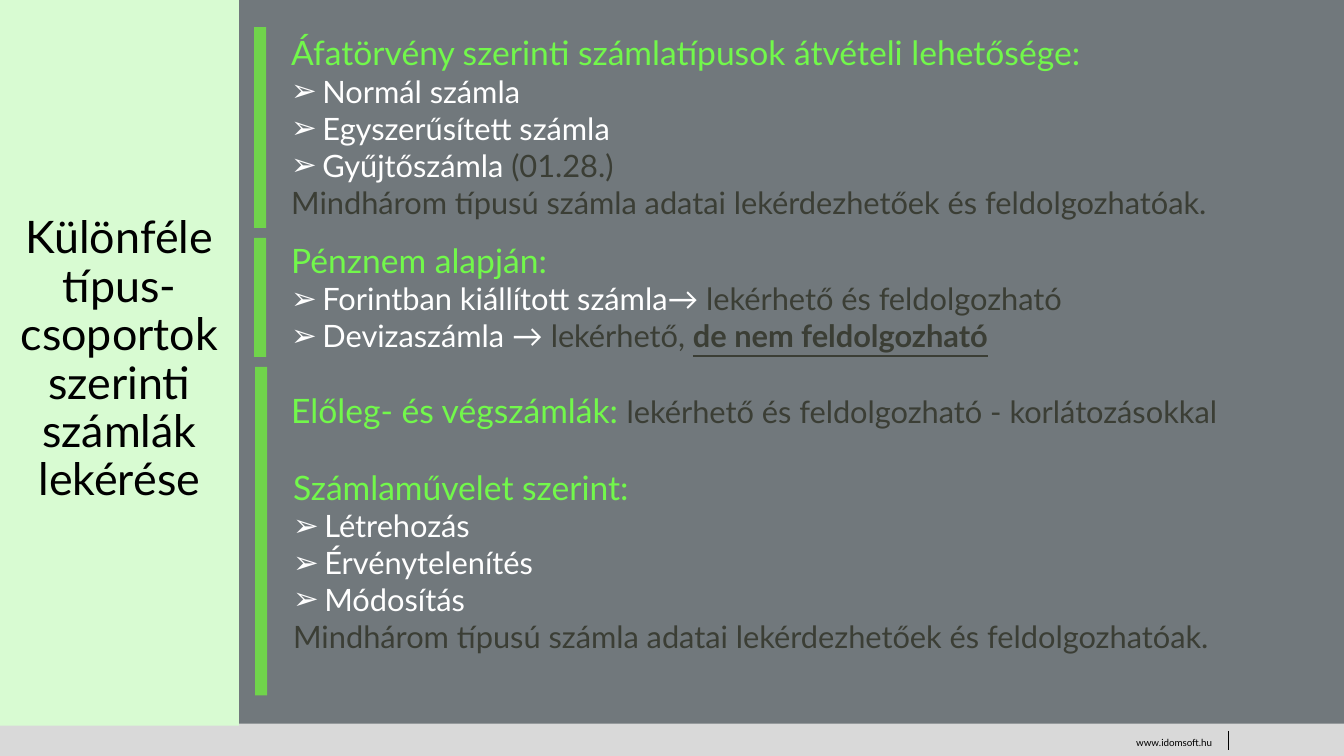
from dataclasses import dataclass

from lxml.etree import SubElement
from pptx import Presentation
from pptx.dml.color import RGBColor
from pptx.enum.shapes import MSO_CONNECTOR, MSO_SHAPE
from pptx.enum.text import MSO_ANCHOR, PP_ALIGN
from pptx.oxml.ns import qn
from pptx.util import Pt

EMU_PER_PX = 9144


@dataclass(frozen=True)
class Theme:
    font: str = "Lato"
    background: str = "71787C"
    footer: str = "D9D9D9"
    sidebar: str = "D8FBD2"
    bar: str = "70D44B"
    heading: str = "72F84B"
    light: str = "FFFFFF"
    dark: str = "3B3E35"
    black: str = "000000"
    title_size: int = 32
    heading_size: int = 24
    body_size: int = 22
    footer_size: int = 7


@dataclass(frozen=True)
class Box:
    left: int
    top: int
    width: int
    height: int

    def emu(self):
        return [px(value) for value in (self.left, self.top, self.width, self.height)]


THEME = Theme()
SUMMARY = "Mindhárom típusú számla adatai lekérdezhetőek és feldolgozhatóak."


def px(value):
    return value * EMU_PER_PX


def add_run(paragraph, text, size, color, strong=False):
    run = paragraph.add_run()
    run.text = text
    run.font.name = THEME.font
    run.font.size = Pt(size)
    run.font.color.rgb = RGBColor.from_string(color)
    if strong:
        run.font.bold = True
        run.font.underline = True


def add_rectangle(slide, box, color):
    shape = slide.shapes.add_shape(MSO_SHAPE.RECTANGLE, *box.emu())
    shape.shadow.inherit = False
    shape.fill.solid()
    shape.fill.fore_color.rgb = RGBColor.from_string(color)
    shape.line.fill.background()
    return shape


def add_text_frame(slide, box):
    frame = slide.shapes.add_textbox(*box.emu()).text_frame
    frame.word_wrap = True
    return frame


def add_bullet(paragraph):
    properties = paragraph._p.get_or_add_pPr()
    properties.set("marL", str(px(31)))
    properties.set("indent", str(px(-31)))
    SubElement(properties, qn("a:buFont"), typeface="Wingdings 2")
    properties[-1].set("typeface", "Arial")
    SubElement(properties, qn("a:buChar"), char="➢")


def heading(text):
    return text, THEME.heading_size, THEME.heading


def light(text):
    return text, THEME.body_size, THEME.light


def dark(text, strong=False):
    return text, THEME.body_size, THEME.dark, strong


def add_section(slide, box, title, bullets=(), closing=()):
    frame = add_text_frame(slide, box)
    first = frame.paragraphs[0]
    for run in title:
        add_run(first, *run)
    for bullet in bullets:
        paragraph = frame.add_paragraph()
        add_bullet(paragraph)
        for run in bullet:
            add_run(paragraph, *run)
    for run in closing:
        add_run(frame.add_paragraph(), *run)


def add_sidebar(slide, box):
    shape = add_rectangle(slide, box, THEME.sidebar)
    frame = shape.text_frame
    frame.word_wrap = True
    frame.vertical_anchor = MSO_ANCHOR.MIDDLE
    paragraph = frame.paragraphs[0]
    paragraph.alignment = PP_ALIGN.CENTER
    paragraph.line_spacing = 0.9
    title = "Különféle típus-csoportok szerinti számlák lekérése"
    add_run(paragraph, title, THEME.title_size, THEME.black)


def add_footer(slide, box):
    add_rectangle(slide, box, THEME.footer)
    frame = add_text_frame(slide, Box(box.left + 1075, box.top + 8, 137, 22))
    paragraph = frame.paragraphs[0]
    paragraph.alignment = PP_ALIGN.RIGHT
    add_run(paragraph, "www.idomsoft.hu", THEME.footer_size, THEME.black)
    x = px(box.left + 1218)
    divider = slide.shapes.add_connector(
        MSO_CONNECTOR.STRAIGHT, x, px(box.top + 7), x, px(box.top + 26))
    divider.line.color.rgb = RGBColor.from_string(THEME.black)
    divider.line.width = Pt(0.75)
    SubElement(divider._element.spPr, qn("a:effectLst"))


def add_content(slide, box):
    for left, top, height in ((0, 0, 199), (0, 209, 118), (1, 337, 326)):
        bar = Box(box.left + left, box.top + top, 12, height)
        add_rectangle(slide, bar, THEME.bar)

    sections = (
        (27, 0, 199,
         [heading("Áfatörvény szerinti számlatípusok átvételi lehetősége:")],
         [[light("Normál számla")],
          [light("Egyszerűsített számla")],
          [light("Gyűjtőszámla "), dark("(01.28.)")]],
         [dark(SUMMARY)]),
        (27, 206, 125,
         [heading("Pénznem alapján:")],
         [[light("Forintban kiállított számla→ "), dark("lekérhető és feldolgozható")],
          [light("Devizaszámla → "), dark("lekérhető, "),
           dark("de nem feldolgozható", strong=True)]],
         []),
        (27, 355, 50,
         [heading("Előleg- és végszámlák: "),
          dark("lekérhető és feldolgozható - korlátozásokkal")],
         [], []),
        (29, 431, 199,
         [heading("Számlaművelet szerint:")],
         [[light(name)] for name in ("Létrehozás", "Érvénytelenítés", "Módosítás")],
         [dark(SUMMARY)]),
    )
    for left, top, height, title, bullets, closing in sections:
        area = Box(box.left + left, box.top + top, box.width - 27, height)
        add_section(slide, area, title, bullets, closing)


def main():
    presentation = Presentation()
    presentation.slide_width = px(1333)
    presentation.slide_height = px(750)
    slide = presentation.slides.add_slide(presentation.slide_layouts[6])
    slide.background.fill.solid()
    slide.background.fill.fore_color.rgb = RGBColor.from_string(THEME.background)
    add_footer(slide, Box(0, 718, 1333, 32))
    add_sidebar(slide, Box(0, -5, 237, 725))
    add_content(slide, Box(252, 27, 1047, 663))
    presentation.save("out.pptx")


if __name__ == "__main__":
    main()
